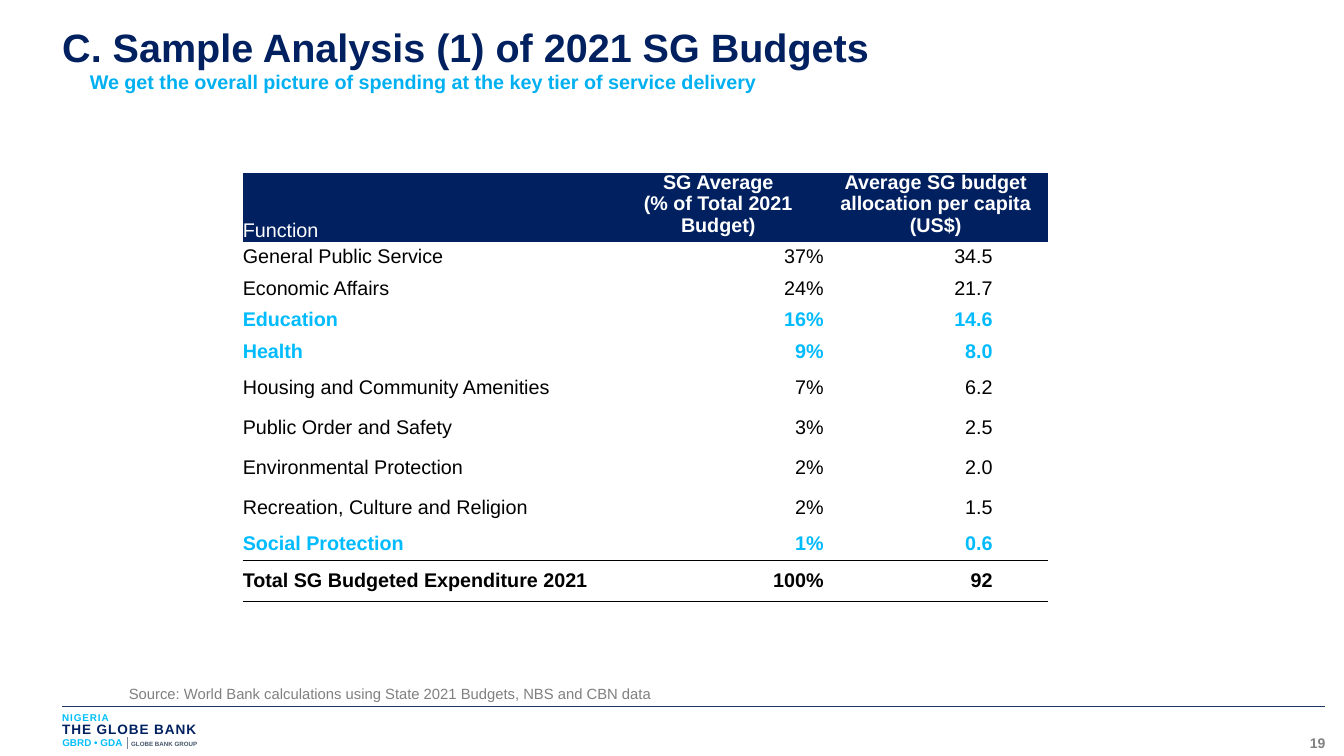
from lxml import etree
from pptx import Presentation
from pptx import util as u
from pptx.dml.color import RGBColor
from pptx.enum import shapes, text
from pptx.oxml.ns import qn

PX = 9144  # 100 px to the inch
NAVY, CYAN, SKY, GREY = "002060", "00BEFA", "00BBFE", "808080"
BLACK, WHITE = "000000", "FFFFFF"
LEFT, CENTER, RIGHT = text.PP_ALIGN.LEFT, text.PP_ALIGN.CENTER, text.PP_ALIGN.RIGHT


def color(value):
    return RGBColor.from_string(value)


def add_run(paragraph, words, size, fill, bold=False, spacing=0):
    run = paragraph.add_run()
    run.text = words
    run.font.name = "Arial"
    run.font.size = u.Pt(size)
    run.font.bold = bold
    run.font.color.rgb = color(fill)
    if spacing:
        run.font._element.set("spc", str(spacing))


presentation = Presentation()
presentation.slide_width = 1511 * PX
presentation.slide_height = 850 * PX
slide = presentation.slides.add_slide(presentation.slide_layouts[6])

# Footer rule
rule = slide.shapes.add_connector(
    shapes.MSO_CONNECTOR.STRAIGHT, 70 * PX, 794 * PX, 1490 * PX, 794 * PX)
rule.line.color.rgb = color("203864")
rule.line.width = u.Pt(0.75)
etree.SubElement(rule._element.spPr, qn("a:effectLst"))

# Text boxes: left, top, width, height, alignment, anchor, insets, runs
TOP, BOTTOM = text.MSO_ANCHOR.TOP, text.MSO_ANCHOR.BOTTOM
text_boxes = [
    (1430, 826, 60, 19, RIGHT, TOP, (0, 0), [("19", 11.3, GREY, True)]),
    (70, 800, 200, 13, LEFT, TOP, (0, 0), [("NIGERIA", 8, CYAN, True, 70)]),
    (70, 811, 200, 19, LEFT, TOP, (0, 0), [("THE GLOBE BANK", 11, NAVY, True, 70)]),
    (70, 828, 161, 13, LEFT, TOP, (0, 0), [
        ("GBRD • GDA ", 8, CYAN, True),
        ("│", 8, "44546A", True),
        ("GLOBE BANK GROUP", 5, "44546A", True)]),
    (70, 25, 1340, 54, LEFT, BOTTOM, (0, 0), [
        ("C. Sample Analysis (1) of 2021 SG Budgets", 32, NAVY, True)]),
    (101, 79, 1340, 27, LEFT, TOP, (0, 0), [
        ("We get the overall picture of spending at the key tier of service delivery",
         16, "00B0F0", True)]),
    (135, 765, 660, 30, LEFT, TOP, (10, 5), [
        ("Source: World Bank calculations using State 2021 Budgets, NBS and CBN data",
         12, GREY)]),
]
for left, top, width, height, alignment, anchor, (inset_x, inset_y), runs in text_boxes:
    box = slide.shapes.add_textbox(left * PX, top * PX, width * PX, height * PX)
    frame = box.text_frame
    frame.word_wrap = True
    frame.vertical_anchor = anchor
    frame.margin_left = frame.margin_right = inset_x * PX
    frame.margin_top = frame.margin_bottom = inset_y * PX
    paragraph = frame.paragraphs[0]
    paragraph.alignment = alignment
    for run in runs:
        add_run(paragraph, *run)

# Budget table
headers = ["Function", "SG Average\n(% of Total 2021 Budget)",
           "Average SG budget allocation per capita (US$)"]
budget = [
    ("General Public Service", "37%", "34.5"),
    ("Economic Affairs", "24%", "21.7"),
    ("Education", "16%", "14.6"),
    ("Health", "9%", "8.0"),
    ("Housing and Community Amenities", "7%", "6.2"),
    ("Public Order and Safety", "3%", "2.5"),
    ("Environmental Protection", "2%", "2.0"),
    ("Recreation, Culture and Religion", "2%", "1.5"),
    ("Social Protection", "1%", "0.6"),
    ("Total SG Budgeted Expenditure 2021", "100%", "92"),
]
highlighted = {"Education", "Health", "Social Protection"}
column_widths = [416, 237, 252]
row_heights = [74] + [35] * 2 + [36] * 2 + [45] * 4 + [36, 46]
rows = [headers] + budget
total_row = len(rows) - 1

frame = slide.shapes.add_table(
    len(rows), len(headers), 273 * PX, 194 * PX,
    sum(column_widths) * PX, sum(row_heights) * PX)
table = frame.table
table.first_row = table.horz_banding = False
# "No Style, No Grid"
table._tbl.tblPr.find(qn("a:tableStyleId")).text = "{2D5ABB26-0587-4C30-8999-92F81FD0307C}"
for column, width in zip(table.columns, column_widths):
    column.width = width * PX
for row, height in zip(table.rows, row_heights):
    row.height = height * PX

for row_index, values in enumerate(rows):
    is_header = row_index == 0
    is_highlighted = values[0] in highlighted
    for column_index, value in enumerate(values):
        cell = table.cell(row_index, column_index)
        cell.margin_left = cell.margin_right = cell.margin_top = cell.margin_bottom = 0
        if is_header:
            cell.vertical_anchor = BOTTOM if column_index == 0 else TOP
            fill, ink, bold = NAVY, WHITE, column_index > 0
            alignment = CENTER if column_index else LEFT
        else:
            cell.vertical_anchor = text.MSO_ANCHOR.MIDDLE
            fill, ink = WHITE, SKY if is_highlighted else BLACK
            bold = is_highlighted or row_index == total_row
            alignment = RIGHT if column_index else LEFT
            if column_index == 2:
                cell.margin_right = 62 * PX

        # Rules above and below the total
        edges = {total_row - 1: ["lnB"], total_row: ["lnT", "lnB"]}.get(row_index, [])
        for edge in edges:
            border = etree.SubElement(cell._tc.get_or_add_tcPr(), qn(f"a:{edge}"),
                                      w=str(u.Pt(0.5)))
            solid = etree.SubElement(border, qn("a:solidFill"))
            etree.SubElement(solid, qn("a:srgbClr"), val=BLACK)
        cell.fill.solid()
        cell.fill.fore_color.rgb = color(fill)

        for line_index, line in enumerate(value.split("\n")):
            cell_text = cell.text_frame
            paragraph = cell_text.add_paragraph() if line_index else cell_text.paragraphs[0]
            paragraph.alignment = alignment
            if is_header:
                paragraph.line_spacing = 0.97
            add_run(paragraph, line, 16, ink, bold)

presentation.save("out.pptx")
